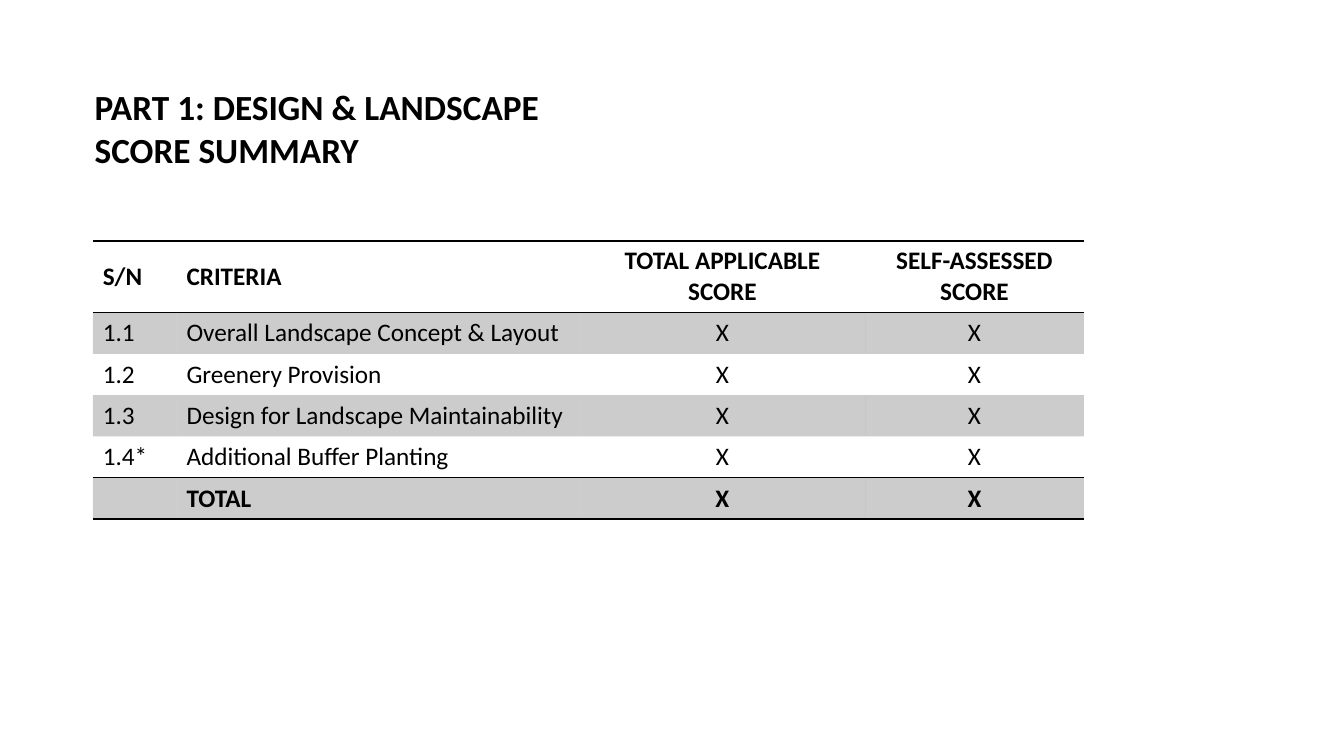
from dataclasses import dataclass

from pptx import Presentation
from pptx.dml.color import RGBColor
from pptx.enum.text import MSO_ANCHOR, PP_ALIGN
from pptx.oxml import parse_xml
from pptx.oxml.ns import nsdecls, qn
from pptx.util import Inches, Pt

MIDDLE = MSO_ANCHOR.MIDDLE
LEFT, CENTER = PP_ALIGN.LEFT, PP_ALIGN.CENTER


@dataclass(frozen=True)
class Theme:
    font: str = "Calibri"
    ink: str = "000000"
    title: float = 25.2
    body: float = 18
    rule: float = 1
    band_alpha: int = 20
    plain_table: str = "{2D5ABB26-0587-4C30-8999-92F81FD0307C}"


THEME = Theme()
TITLE = ["PART 1: DESIGN & LANDSCAPE", "SCORE SUMMARY"]
SCORES = [
    ("S/N", "CRITERIA", "TOTAL APPLICABLE SCORE", "SELF-ASSESSED SCORE"),
    ("1.1", "Overall Landscape Concept & Layout", "X", "X"),
    ("1.2", "Greenery Provision", "X", "X"),
    ("1.3", "Design for Landscape Maintainability", "X", "X"),
    ("1.4*", "Additional Buffer Planting", "X", "X"),
    ("", "TOTAL", "X", "X"),
]
COLUMNS = [0.83, 4, 2.83, 2.17]
ALIGNMENTS = [LEFT, LEFT, CENTER, CENTER]
HEADER_HEIGHT, ROW_HEIGHT = 0.71, 0.41


def add_run(p, text, size, bold):
    r = p.add_run()
    r.text = text
    r.font.name = THEME.font
    r.font.size = Pt(size)
    r.font.bold = bold
    r.font.color.rgb = RGBColor.from_string(THEME.ink)


def add_title(s, lines, left, top, width, height):
    sp = s.shapes.add_textbox(*map(Inches, (left, top, width, height)))
    tf = sp.text_frame
    tf.word_wrap = True
    tf.vertical_anchor = MIDDLE
    p = tf.paragraphs[0]
    for i, line in enumerate(lines):
        if i:
            p.add_line_break()
        add_run(p, line, THEME.title, True)


def style_cell(cell, ruled_sides, banded):
    tc_pr = cell._tc.get_or_add_tcPr()
    for side in ("L", "R", "T", "B"):
        if side in ruled_sides:
            width = Pt(THEME.rule)
            fill = f'<a:solidFill><a:srgbClr val="{THEME.ink}"/></a:solidFill>'
        else:
            width, fill = 0, "<a:noFill/>"
        tc_pr.append(parse_xml(
            f'<a:ln{side} {nsdecls("a")} w="{width}">{fill}</a:ln{side}>'))
    if banded:
        tc_pr.append(parse_xml(
            f'<a:solidFill {nsdecls("a")}><a:srgbClr val="{THEME.ink}">'
            f'<a:alpha val="{THEME.band_alpha * 1000}"/>'
            '</a:srgbClr></a:solidFill>'))
    else:
        cell.fill.background()


def add_scores(s, rows, left, top):
    heights = [HEADER_HEIGHT] + [ROW_HEIGHT] * (len(rows) - 1)
    frame = s.shapes.add_table(
        len(rows), len(COLUMNS), Inches(left), Inches(top),
        Inches(sum(COLUMNS)), Inches(sum(heights)))
    table = frame.table
    table.horz_banding = False
    table._tbl.tblPr.find(qn("a:tableStyleId")).text = THEME.plain_table
    for column, width in zip(table.columns, COLUMNS):
        column.width = Inches(width)
    last = len(rows) - 1
    ruled = {0: "TB", 1: "T", last - 1: "B", last: "TB"}
    for i, (row, height) in enumerate(zip(rows, heights)):
        table.rows[i].height = Inches(height)
        for j, text in enumerate(row):
            cell = table.cell(i, j)
            cell.vertical_anchor = MIDDLE
            style_cell(cell, ruled.get(i, ""), i % 2 == 1)
            p = cell.text_frame.paragraphs[0]
            p.alignment = ALIGNMENTS[j]
            if text:
                add_run(p, text, THEME.body, i in (0, last))


def main():
    prs = Presentation()
    prs.slide_width, prs.slide_height = Inches(13.33), Inches(7.5)
    s = prs.slides.add_slide(prs.slide_layouts[6])
    add_title(s, TITLE, 0.84, 0.76, 9.21, 1.02)
    add_scores(s, SCORES, 0.92, 2.39)
    prs.save("out.pptx")


if __name__ == "__main__":
    main()
